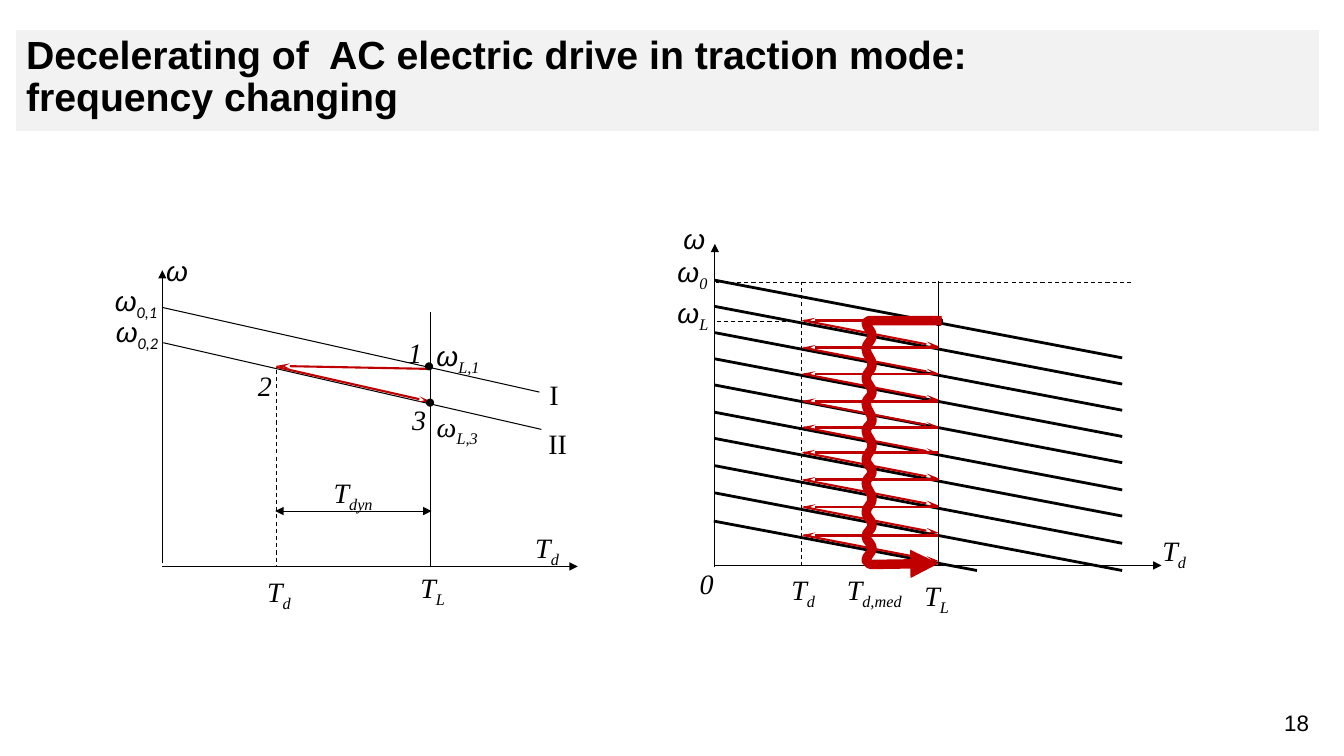
"""Build a slide on decelerating an AC drive by frequency changing."""
from lxml import etree
from pptx import Presentation
from pptx.dml.color import RGBColor
from pptx.enum import dml, shapes, text
from pptx.oxml.ns import qn
from pptx.util import Inches, Pt

COLORS = {"black": "000000", "red": "C00000", "band": "F2F2F2"}
SERIF, SANS, CALIBRI = "Times New Roman", "Arial", "Calibri"
TITLE = ["Decelerating of  AC electric drive in traction mode:", "frequency changing"]
PAGE_NUMBER = "18"

# left, top, width, height, symbol, symbol font, subscript, subscript font
LABELS = [
    (11.43, 5.19, 0.6, 0.64, "T", SERIF, "d", SERIF),
    (7.75, 5.57, 0.81, 0.64, "T", SERIF, "d", SERIF),
    (6.62, 2.83, 0.81, 0.64, "ω", SANS, "L", SERIF),
    (9.07, 5.63, 0.54, 0.64, "T", SERIF, "L", SERIF),
    (6.68, 2.1, 0.81, 0.64, "ω", SANS, "", SERIF),
    (6.62, 2.42, 0.81, 0.64, "ω", SANS, "0", SERIF),
    (6.84, 5.52, 0.4, 0.63, "0", SERIF, "", SERIF),
    (8.3, 5.57, 0.88, 0.64, "T", SERIF, "d,med", SERIF),
    (1.04, 2.71, 0.75, 0.58, "ω", SANS, "0,1", CALIBRI),
    (1.05, 3.01, 0.75, 0.58, "ω", SANS, "0,2", CALIBRI),
    (5.21, 5.16, 0.56, 0.58, "T", SERIF, "d", SERIF),
    (2.55, 5.59, 0.75, 0.58, "T", SERIF, "d", SERIF),
    (3.99, 3.89, 0.56, 0.58, "3", SERIF, "", SERIF),
    (2.46, 3.56, 0.56, 0.58, "2", SERIF, "", SERIF),
    (3.95, 3.23, 0.38, 0.57, "1", SERIF, "", SERIF),
    (4.23, 3.25, 0.75, 0.58, "ω", SANS, "L,1", SERIF),
    (4.07, 5.55, 0.75, 0.58, "T", SERIF, "L", SERIF),
    (1.55, 2.42, 0.75, 0.58, "ω", SANS, "", SERIF),
    (3.21, 4.61, 0.75, 0.58, "T", SERIF, "dyn", SERIF),
]
CENTERED_LABEL = (4.29, 4.01, 0.49, 0.37, "ω", SERIF, "L,3", SERIF)
CURVE_NAMES = [
    (5.35, 3.65, 0.57, 0.58, "I", SERIF, "", SERIF),
    (5.34, 4.13, 0.57, 0.58, "II", SERIF, "", SERIF),
]
AXES = [
    (7.09, 5.63, 7.09, 2.42), (7.09, 5.61, 11.52, 5.61),
    (1.61, 5.59, 1.61, 2.68), (1.61, 5.62, 5.73, 5.62),
]
THIN_LINES = [
    (9.31, 2.79, 9.31, 5.61), (4.27, 3.1, 4.27, 5.62),
    (1.61, 3.05, 5.35, 3.89), (1.62, 3.4, 5.37, 4.26),
]
DASHED_LINES = [
    (11.22, 2.8, 7.1, 2.8), (7.95, 5.62, 7.95, 2.8),
    (9.3, 3.19, 7.1, 3.19), (2.74, 3.67, 2.74, 5.61),
]
LEFT_TRANSITIONS = [(4.27, 3.66, 2.74, 3.63), (2.74, 3.64, 4.29, 3.99)]
DYNAMIC_SPAN = (2.73, 5.07, 4.28, 5.07)
DOTS = [(9.27, 3.15, 0.08), (4.22, 3.6, 0.07), (4.23, 3.96, 0.07)]
CURVE_TOPS = [2.78, 3.04, 3.3, 3.56, 3.82, 4.09, 4.35, 4.62, 4.89]
SWITCH_LEVELS = [3.18, 3.45, 3.71, 3.98, 4.24, 4.49, 4.76, 5.03, 5.31]
WAVE_TURNS = [3.2, 3.33, 3.46, 3.62, 3.75, 3.89, 4, 4.17, 4.27, 4.42,
              4.56, 4.68, 4.79, 4.95, 5.08, 5.21, 5.32, 5.44, 5.56]
WAVE_SIDES = (8.59, 8.65)


def paint(color):
    return RGBColor.from_string(COLORS[color])


def add_ends(line, **ends):
    for tag, kind in ends.items():
        end = etree.SubElement(line._get_or_add_ln(), qn(f"a:{tag}End"), type=kind)
        if kind == "stealth":
            end.set("w", "sm")
            end.set("len", "lg")


def add_line(page, points, width=0.75, color="black", dash=False, **ends):
    connector = page.shapes.add_connector(
        shapes.MSO_CONNECTOR.STRAIGHT, *(Inches(value) for value in points))
    etree.SubElement(connector._element.spPr, qn("a:effectLst"))
    connector.line.width = Pt(width)
    connector.line.color.rgb = paint(color)
    if dash:
        connector.line.dash_style = dml.MSO_LINE.DASH
    add_ends(connector.line, **ends)


def add_label(page, label, italic=True, centered=False):
    *place, symbol, symbol_font, subscript, subscript_font = label
    box = page.shapes.add_textbox(*(Inches(value) for value in place))
    frame = box.text_frame
    frame.word_wrap = True
    para = frame.paragraphs[0]
    para.line_spacing, para.space_after = 1.15, Pt(10)
    if centered:
        para.alignment = text.PP_ALIGN.CENTER
        frame.margin_left = frame.margin_right = 0
        frame.margin_top = frame.margin_bottom = 0
    para.font.size, para.font.italic = Pt(20), italic
    para.font.color.rgb = paint("black")
    for words, font in ((symbol, symbol_font), (subscript, subscript_font)):
        if words:
            span = para.add_run()
            span.text = words
            span.font.name = font
            if words == subscript:
                span.font._element.set("baseline", "-25000")


def add_title(page):
    box = page.shapes.add_shape(
        shapes.MSO_SHAPE.RECTANGLE, Inches(0.16), Inches(0.3), Inches(12.92), Inches(1))
    box.shadow.inherit = False
    box.fill.solid()
    box.fill.fore_color.rgb = paint("band")
    box.line.fill.background()
    frame = box.text_frame
    frame.word_wrap = True
    frame.vertical_anchor = text.MSO_ANCHOR.TOP
    frame.text = "\n".join(TITLE)
    for para in frame.paragraphs:
        para.alignment, para.line_spacing = text.PP_ALIGN.LEFT, 0.9
        para.font.name, para.font.size, para.font.bold = SANS, Pt(28), True
        para.font.color.rgb = paint("black")


def add_page_number(page):
    box = page.shapes.add_textbox(Inches(12.54), Inches(6.99), Inches(0.64), Inches(0.37))
    box.text_frame.word_wrap = True
    para = box.text_frame.paragraphs[0]
    para.text, para.alignment = PAGE_NUMBER, text.PP_ALIGN.CENTER
    para.font.name, para.font.size = SANS, Pt(16)
    para.font.color.rgb = paint("black")


def add_dot(page, left, top, size):
    dot = page.shapes.add_shape(
        shapes.MSO_SHAPE.OVAL, Inches(left), Inches(top), Inches(size), Inches(size))
    dot.shadow.inherit = False
    dot.fill.solid()
    dot.fill.fore_color.rgb = dot.line.color.rgb = paint("black")
    dot.line.width = Pt(0.75)


def curve_segment(segment, start):
    """Turn a straight segment into a cubic one with upright tangents."""
    end = segment[0]
    start_y, end_y = int(start.get("y")), int(end.get("y"))
    reach = (end_y - start_y) * 2 // 5
    segment.tag = qn("a:cubicBezTo")
    for index, (x, y) in enumerate(
            ((start.get("x"), start_y + reach), (end.get("x"), end_y - reach))):
        segment.insert(index, etree.Element(qn("a:pt"), x=x, y=str(y)))


def add_wave(page):
    points = [(9.34, 3.18), (8.62, 3.18)]
    points += [(WAVE_SIDES[turn % 2], y) for turn, y in enumerate(WAVE_TURNS)]
    points += [(8.63, 5.6), (9.31, 5.59)]
    corners = [(Inches(x), Inches(y)) for x, y in points]
    builder = page.shapes.build_freeform(*corners[0])
    builder.add_line_segments(corners[1:], close=False)
    wave = builder.convert_to_shape()
    segments = list(next(wave._element.iter(qn("a:moveTo"))).getparent())
    for before, segment in zip(segments[2:-3], segments[3:-2]):
        curve_segment(segment, before[-1])
    wave.shadow.inherit = False
    wave.fill.background()
    wave.line.color.rgb = paint("red")
    wave.line.width = Pt(6.75)
    add_ends(wave.line, tail="triangle")


def main():
    deck = Presentation()
    deck.slide_width, deck.slide_height = Inches(13.33), Inches(7.5)
    page = deck.slides.add_slide(deck.slide_layouts[6])
    add_page_number(page)
    add_title(page)
    for axis in AXES:
        add_line(page, axis, tail="triangle")
    for points in THIN_LINES:
        add_line(page, points)
    for points in DASHED_LINES:
        add_line(page, points, dash=True)
    for top in CURVE_TOPS:
        add_line(page, (7.09, top, 11.13, top + 0.77), 2)
    add_line(page, (7.08, 5.17, 9.69, 5.66), 2)
    for level in SWITCH_LEVELS:
        add_line(page, (9.3, level, 7.95, level), 2, "red", tail="stealth")
        add_line(page, (7.97, level, 9.32, level + 0.26), 1.5, "red", tail="stealth")
    for points in LEFT_TRANSITIONS:
        add_line(page, points, 1.5, "red", tail="stealth")
    add_line(page, DYNAMIC_SPAN, 0.5, head="triangle", tail="triangle")
    for dot in DOTS:
        add_dot(page, *dot)
    add_wave(page)
    for label in LABELS:
        add_label(page, label)
    for label in CURVE_NAMES:
        add_label(page, label, italic=False)
    add_label(page, CENTERED_LABEL, centered=True)
    deck.save("out.pptx")


if __name__ == "__main__":
    main()
